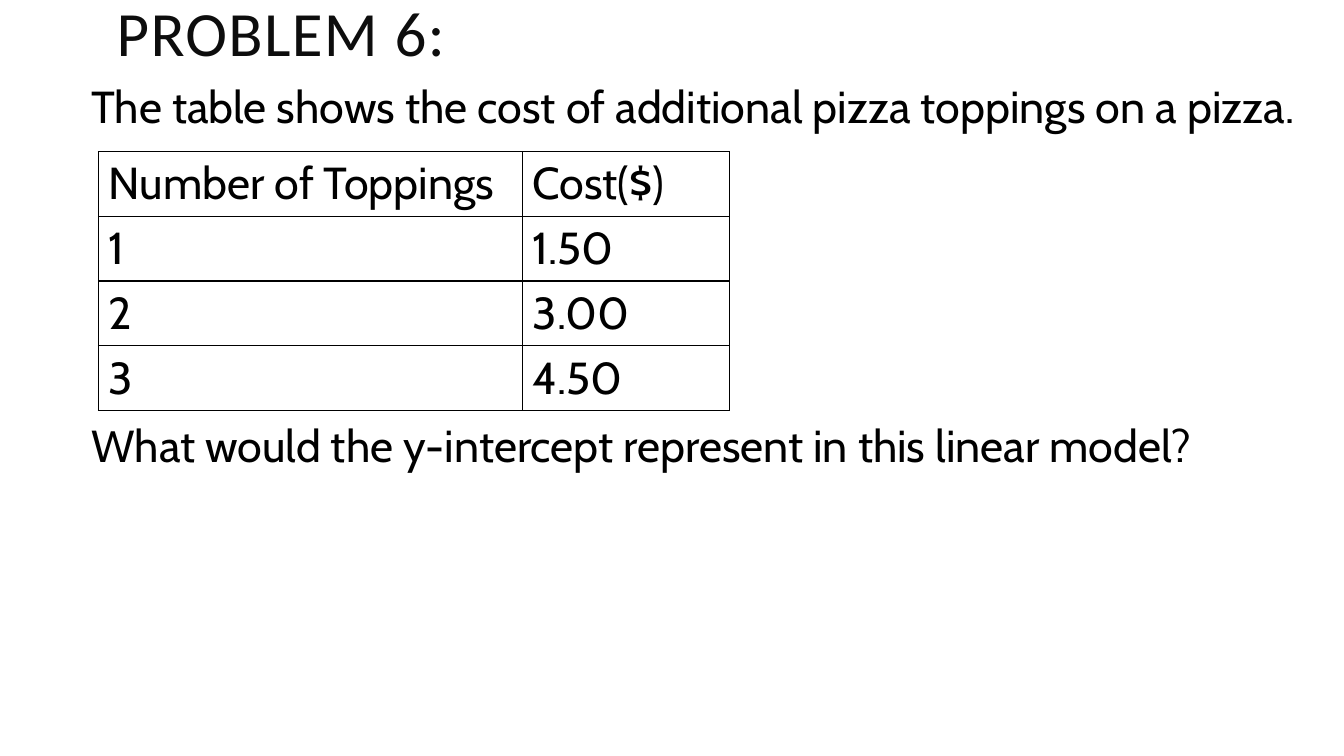
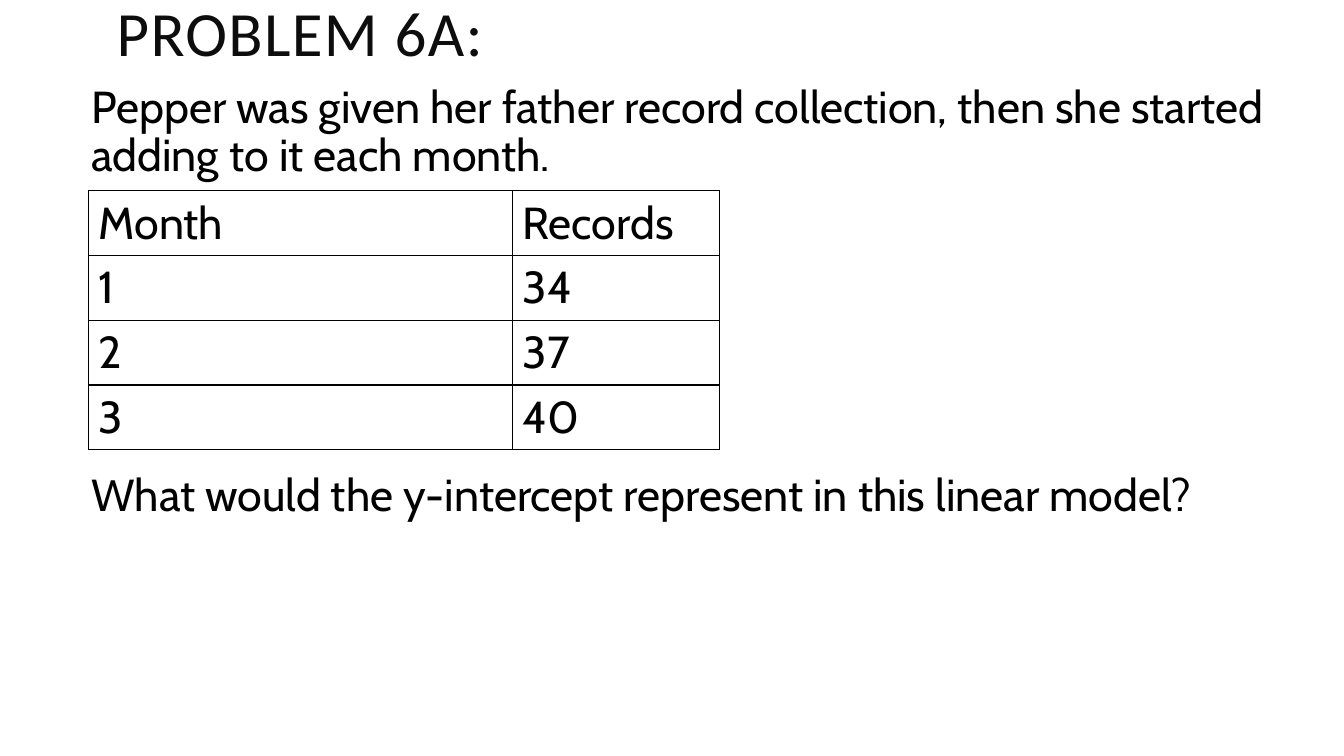
from dataclasses import dataclass

from lxml.etree import SubElement as Sub
from pptx import Presentation
from pptx.dml.color import RGBColor as Color
from pptx.enum.text import MSO_ANCHOR as Anchor
from pptx.oxml.ns import qn
from pptx.util import Cm, Pt


@dataclass(frozen=True)
class Theme:
    ink: str = "000000"
    head: str = "0D0D0D"
    font: str = "Cabin"
    title: str = "Calibri"
    size: int = 32
    big: int = 45
    rule: int = 1


@dataclass(frozen=True)
class Box:
    left: float
    top: float
    width: float
    height: float

    def place(self):
        return [Cm(n) for n in (self.left, self.top, self.width, self.height)]


THEME = Theme()
TITLE = Box(2.69, 0, 27, 1.92)
BODY = Box(1.91, 2, 30.96, 14.38)
COLS = (10.69, 5.21)
ROW = 1.63
ASK = "What would the y-intercept represent in this linear model?"

TASKS = [
    ("PROBLEM 6:",
     "The table shows the cost of additional pizza toppings on a pizza.",
     (2.48, 3.82),
     [("Number of Toppings", "Cost($)"),
      ("1", "1.50"), ("2", "3.00"), ("3", "4.50")]),
    ("PROBLEM 6A:",
     "Pepper was given her father record collection, "
     "then she started adding to it each month.",
     (2.23, 4.81),
     [("Month", "Records"), ("1", "34"), ("2", "37"), ("3", "40")]),
]


def style(para, name, size, ink):
    font = para.font
    font.name = name
    font.size = Pt(size)
    font.color.rgb = Color.from_string(ink)


def frame(slide, box):
    text = slide.shapes.add_textbox(*box.place()).text_frame
    text.word_wrap = True
    return text


def add_title(slide, box, words):
    text = frame(slide, box)
    text.vertical_anchor = Anchor.MIDDLE
    para = text.paragraphs[0]
    run = para.add_run()
    run.text = words
    para.line_spacing = 0.8
    style(para, THEME.title, THEME.big, THEME.head)
    run.font._element.set("spc", "100")


def add_body(slide, box, intro):
    text = frame(slide, box)
    text.margin_left = Cm(0.39)
    text.margin_right = text.margin_top = text.margin_bottom = Cm(0.13)
    for index, (words, gap) in enumerate([(intro, 12), (ASK, 206)]):
        para = text.add_paragraph() if index else text.paragraphs[0]
        para.text = words
        para.line_spacing = 0.9
        para.space_before = Pt(gap)
        para.space_after = Pt(2)
        style(para, THEME.font, THEME.size, THEME.ink)


def add_rules(cell):
    props = cell._tc.get_or_add_tcPr()
    for side in "LRTB":
        line = Sub(props, qn("a:ln" + side), w=str(Pt(THEME.rule)))
        fill = Sub(line, qn("a:solidFill"))
        Sub(fill, qn("a:srgbClr"), val=THEME.ink)


def add_grid(slide, box, rows):
    grid = slide.shapes.add_table(len(rows), len(COLS), *box.place()).table
    grid.first_row = grid.horz_banding = False
    for col, width in zip(grid.columns, COLS):
        col.width = Cm(width)
    for row, words in zip(grid.rows, rows):
        row.height = Cm(ROW)
        for cell, word in zip(row.cells, words):
            cell.text = word
            style(cell.text_frame.paragraphs[0],
                  THEME.font, THEME.size, THEME.ink)
            add_rules(cell)
            cell.fill.background()


def add_task(deck, title, intro, spot, rows):
    slide = deck.slides.add_slide(deck.slide_layouts[6])
    add_title(slide, TITLE, title)
    add_body(slide, BODY, intro)
    add_grid(slide, Box(*spot, sum(COLS), ROW * len(rows)), rows)


def main():
    deck = Presentation()
    deck.slide_width, deck.slide_height = Cm(33.87), Cm(19.05)
    for task in TASKS:
        add_task(deck, *task)
    deck.save("out.pptx")


if __name__ == "__main__":
    main()
